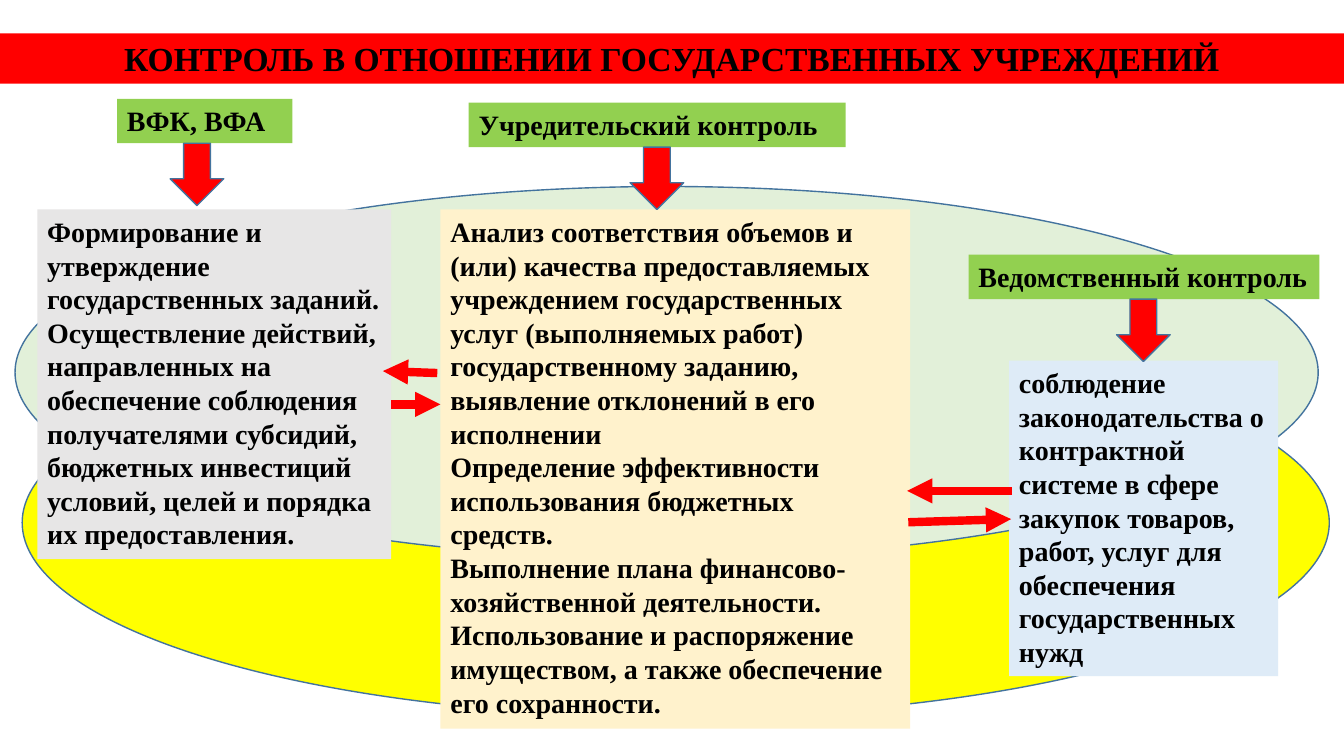
from lxml import etree
from pptx import Presentation
from pptx import util as u
from pptx.dml.color import RGBColor
from pptx.enum import shapes, text
from pptx.oxml.ns import qn

FONT = "Times New Roman"
BLACK = RGBColor(0x00, 0x00, 0x00)
RED = RGBColor(0xFF, 0x00, 0x00)
GREEN = RGBColor(0x92, 0xD0, 0x50)
YELLOW = RGBColor(0xFF, 0xFF, 0x00)
PALE_GREEN = RGBColor(0xE2, 0xF0, 0xD9)
CREAM = RGBColor(0xFF, 0xF2, 0xCC)
GREY = RGBColor(0xE7, 0xE6, 0xE6)
PALE_BLUE = RGBColor(0xDE, 0xEB, 0xF7)
OUTLINE = RGBColor(0x43, 0x73, 0x9E)

SLIDE_WIDTH, SLIDE_HEIGHT = 33.87, 19.05
LABEL_HEIGHT = 1.12
ARROW_WIDTH, ARROW_HEIGHT = 1.35, 1.57

ELLIPSES = [
    (0.56, 8.28, 32.94, 9.78, YELLOW),
    (0.38, 4.7, 32.84, 9.37, PALE_GREEN),
]

CONTROLS = [
    ("ВФК, ВФА", (2.95, 2.49, 4.42), 4.29, (0.94, 5.28, 8.92, 8.81), GREY, [
        "Формирование и утверждение государственных заданий.",
        "Осуществление действий, направленных на обеспечение соблюдения "
        "получателями субсидий, бюджетных инвестиций условий, целей и порядка "
        "их предоставления.",
    ]),
    ("Учредительский контроль", (11.81, 2.59, 9.5), 15.88, (11.1, 5.28, 11.84, 13.08), CREAM, [
        "Анализ соответствия объемов и (или) качества предоставляемых "
        "учреждением государственных услуг (выполняемых работ) "
        "государственному заданию, выявление отклонений в его исполнении",
        "Определение эффективности использования бюджетных средств.",
        "Выполнение плана финансово-хозяйственной деятельности.",
        "Использование и распоряжение имуществом, а также обеспечение его сохранности.",
    ]),
    ("Ведомственный контроль", (24.41, 6.42, 8.84), 28.14, (25.43, 9.09, 6.78, 7.95), PALE_BLUE, [
        "соблюдение законодательства о контрактной системе в сфере закупок "
        "товаров, работ, услуг для обеспечения государственных нужд",
    ]),
]

LINKS = [
    (9.86, 10.19, 11.1, 10.19),
    (11.02, 9.4, 9.65, 9.35),
    (25.5, 12.37, 22.86, 12.37),
    (22.89, 13.16, 25.48, 13.08),
]


def set_fill(shape, color):
    shape.fill.solid()
    shape.fill.fore_color.rgb = color


def set_font(para, size):
    para.font.name = FONT
    para.font.size = u.Pt(size)
    para.font.bold = True
    para.font.color.rgb = BLACK


def add_title(page, words):
    title = page.shapes.title
    title.left, title.top = u.Cm(0), u.Cm(0.84)
    title.width, title.height = u.Cm(SLIDE_WIDTH), u.Cm(1.27)
    set_fill(title, RED)
    frame = title.text_frame
    frame.text = words
    frame.word_wrap = True
    frame.auto_size = text.MSO_AUTO_SIZE.NONE
    frame.vertical_anchor = text.MSO_ANCHOR.MIDDLE
    para = frame.paragraphs[0]
    para.alignment = text.PP_ALIGN.CENTER
    para.line_spacing = 1.0
    set_font(para, 24)


def add_outlined(page, kind, left, top, width, height, color):
    shape = page.shapes.add_shape(kind, u.Cm(left), u.Cm(top), u.Cm(width), u.Cm(height))
    shape.shadow.inherit = False
    set_fill(shape, color)
    shape.line.color.rgb = OUTLINE
    shape.line.width = u.Pt(1)


def add_text(page, left, top, width, height, color, lines):
    box = page.shapes.add_textbox(u.Cm(left), u.Cm(top), u.Cm(width), u.Cm(height))
    set_fill(box, color)
    frame = box.text_frame
    frame.word_wrap = True
    frame.auto_size = text.MSO_AUTO_SIZE.SHAPE_TO_FIT_TEXT
    frame.text = "\n".join(lines)
    for para in frame.paragraphs:
        set_font(para, 20)


def add_control(page, name, label, arrow_left, box, color, lines):
    left, top, width = label
    add_text(page, *box, color, lines)
    add_text(page, left, top, width, LABEL_HEIGHT, GREEN, [name])
    add_outlined(page, shapes.MSO_SHAPE.DOWN_ARROW, arrow_left, top + LABEL_HEIGHT,
                 ARROW_WIDTH, ARROW_HEIGHT, RED)


def add_link(page, *ends):
    link = page.shapes.add_connector(shapes.MSO_CONNECTOR.STRAIGHT, *map(u.Cm, ends))
    link.line.color.rgb = RED
    link.line.width = u.Pt(6)
    etree.SubElement(link.line._get_or_add_ln(), qn("a:tailEnd"), type="triangle")
    etree.SubElement(link._element.spPr, qn("a:effectLst"))


def main():
    deck = Presentation()
    deck.slide_width, deck.slide_height = u.Cm(SLIDE_WIDTH), u.Cm(SLIDE_HEIGHT)
    page = deck.slides.add_slide(deck.slide_layouts[5])
    add_title(page, "КОНТРОЛЬ В ОТНОШЕНИИ ГОСУДАРСТВЕННЫХ УЧРЕЖДЕНИЙ")
    for ellipse in ELLIPSES:
        add_outlined(page, shapes.MSO_SHAPE.OVAL, *ellipse)
    for control in CONTROLS:
        add_control(page, *control)
    for link in LINKS:
        add_link(page, *link)
    deck.save("out.pptx")


if __name__ == "__main__":
    main()
